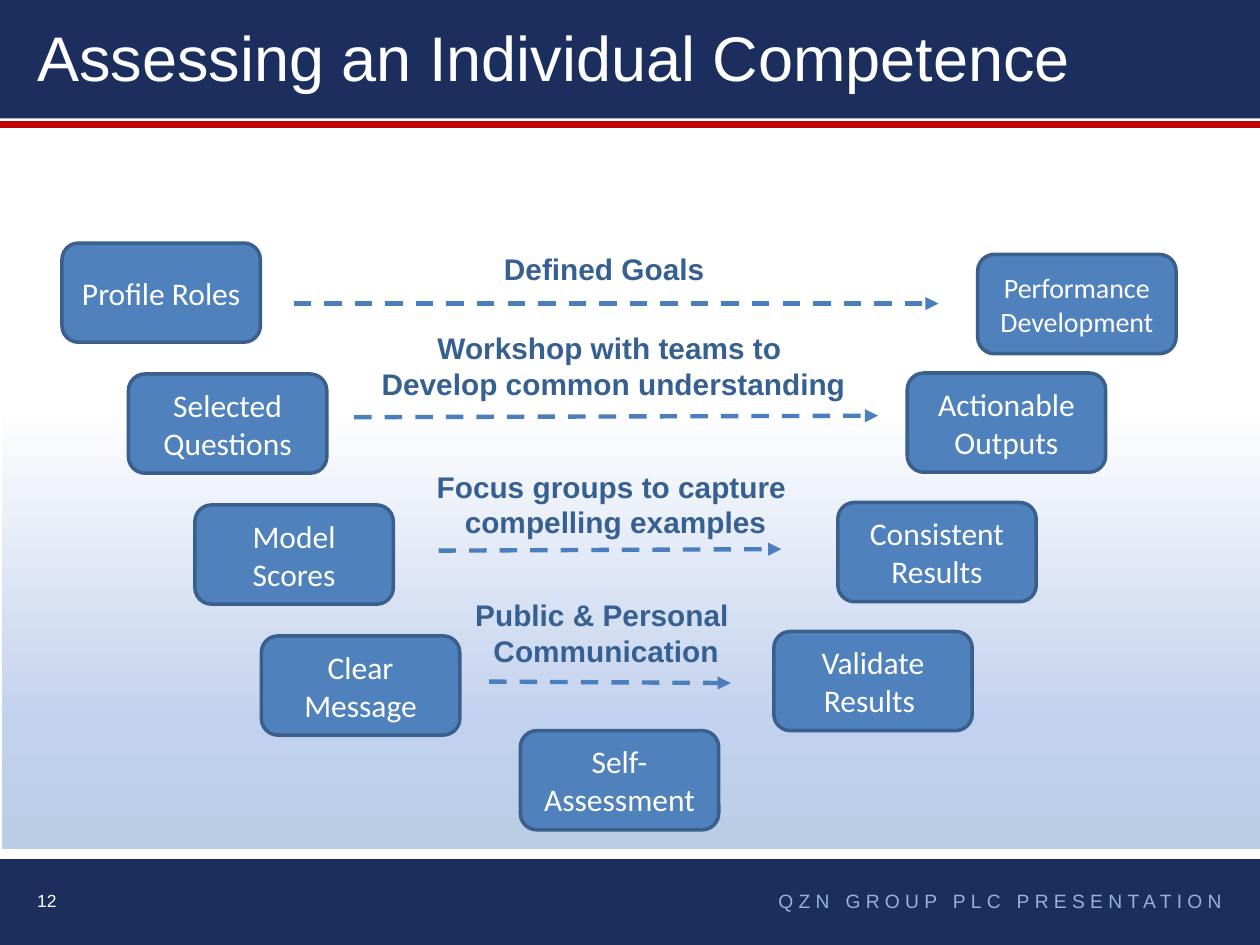
"""Build the slide on assessing an individual competence."""
from dataclasses import dataclass

from pptx import Presentation
from pptx.dml.color import RGBColor
from pptx.enum.dml import MSO_LINE_DASH_STYLE as Dash
from pptx.enum.shapes import MSO_CONNECTOR as Link, MSO_SHAPE as Kind
from pptx.enum.text import MSO_ANCHOR as Anchor, MSO_AUTO_SIZE as Fit, PP_ALIGN as Align
from pptx.oxml import parse_xml
from pptx.oxml.ns import nsdecls
from pptx.util import Cm, Pt

NAVY = RGBColor(0x1B, 0x2E, 0x5D)
RED = RGBColor(0xC0, 0x00, 0x00)
WHITE = RGBColor(0xFF, 0xFF, 0xFF)
BLUE = RGBColor(0x4F, 0x81, 0xBD)
EDGE = RGBColor(0x3A, 0x5F, 0x8C)
DASHED = RGBColor(0x4B, 0x7E, 0xBC)
INK = RGBColor(0x37, 0x60, 0x92)
PALE = RGBColor(0x95, 0xB3, 0xD7)
STOPS = ((0, RGBColor(0xB9, 0xCD, 0xE5)), (18, RGBColor(0xC2, 0xD1, 0xED)), (63, WHITE))

NODE = {"name": "Calibri", "size": Pt(18)}
HEAD = {"name": "Arial", "size": Pt(36)}
NOTE = {"name": "Arial", "size": Pt(17), "bold": True}
PAGE = {"name": "Arial", "size": Pt(10)}
FOOT = {"name": "Arial", "size": Pt(11)}


@dataclass
class Node:
    text: str
    x: float
    y: float
    size: int = 18


@dataclass
class Step:
    text: str
    box: tuple
    start: tuple
    end: tuple
    align: Align = Align.CENTER
    wrap: bool = False


LEFT = ("Profile Roles", "Selected Questions", "Model Scores", "Clear Message")
NODES = [Node(text, 1.25 + 1.34 * i, 4.9 + 2.64 * i) for i, text in enumerate(LEFT)] + [
    Node("Performance Development", 19.71, 5.13, 16),
    Node("Actionable Outputs", 18.29, 7.52),
    Node("Consistent Results", 16.89, 10.13),
    Node("Validate\nResults ", 15.6, 12.73),
    Node("Self-Assessment", 10.49, 14.73),
]
STEPS = [
    Step("Defined Goals", (9.91, 4.93, 4.75, 0.99), (5.92, 6.12), (18.92, 6.12), Align.LEFT),
    Step("Workshop with teams to \nDevelop common understanding",
         (6.91, 6.53, 10.92, 1.7), (7.14, 8.41), (17.7, 8.38), wrap=True),
    Step("Focus groups to capture \ncompelling examples",
         (8.51, 9.32, 7.8, 1.7), (8.84, 11.1), (15.75, 11.07)),
    Step("Public & Personal \nCommunication",
         (9.3, 11.91, 5.84, 1.7), (9.86, 13.74), (14.73, 13.77)),
]


def write(shape, text: str, style: dict, color: RGBColor, align: Align = Align.LEFT, **form) -> None:
    """Fill a shape with styled text."""
    frame = shape.text_frame
    frame.text = text
    for key, value in ({"word_wrap": True, "vertical_anchor": Anchor.MIDDLE} | form).items():
        setattr(frame, key, value)
    for para in frame.paragraphs:
        para.alignment = align
        for run in para.runs:
            for key, value in style.items():
                setattr(run.font, key, value)
            run.font.color.rgb = color


def block(slide, kind: Kind, box: tuple, color: RGBColor):
    """Add a plain filled shape."""
    shape = slide.shapes.add_shape(kind, *map(Cm, box))
    shape.shadow.inherit = False
    shape.fill.solid()
    shape.fill.fore_color.rgb = color
    shape.line.fill.background()
    return shape


def rule(slide, start: tuple, end: tuple, color: RGBColor, width: float):
    """Add a straight line without shadow."""
    line = slide.shapes.add_connector(Link.STRAIGHT, *map(Cm, start + end))
    line.line.color.rgb = color
    line.line.width = Pt(width)
    line._element.spPr.append(parse_xml(f"<a:effectLst {nsdecls('a')}/>"))
    return line


def shade(shape) -> None:
    """Swap the solid fill for the pale gradient."""
    stops = "".join(f'<a:gs pos="{pos * 1000}"><a:srgbClr val="{color}"/></a:gs>'
                    for pos, color in STOPS)
    grad = parse_xml(f'<a:gradFill {nsdecls("a")} rotWithShape="1"><a:gsLst>{stops}</a:gsLst>'
                     '<a:lin ang="5400000" scaled="0"/></a:gradFill>')
    props = shape._element.spPr
    props.replace(props.find(".//{*}solidFill"), grad)
    shape.rotation = 180


def draw_node(slide, node: Node) -> None:
    """Add one rounded box."""
    shape = block(slide, Kind.ROUNDED_RECTANGLE, (node.x, node.y, 4, 2), BLUE)
    shape.line.color.rgb = EDGE
    shape.line.width = Pt(2)
    write(shape, node.text, NODE | {"size": Pt(node.size)}, WHITE, Align.CENTER)


def draw_step(slide, step: Step) -> None:
    """Add one dashed arrow and its caption."""
    line = rule(slide, step.start, step.end, DASHED, 2.5).line
    line.dash_style = Dash.DASH
    line._get_or_add_ln().append(parse_xml(f'<a:tailEnd {nsdecls("a")} type="triangle"/>'))
    box = slide.shapes.add_textbox(*map(Cm, step.box))
    write(box, step.text, NOTE, INK, step.align, word_wrap=step.wrap,
          vertical_anchor=Anchor.TOP, auto_size=Fit.SHAPE_TO_FIT_TEXT)


def main() -> None:
    """Build and save the slide."""
    deck = Presentation()
    deck.slide_width, deck.slide_height = Cm(25.4), Cm(19.05)
    slide = deck.slides.add_slide(deck.slide_layouts[5])
    shapes = slide.shapes
    for top, high in ((17.32, 1.8), (0, 2.39)):
        block(slide, Kind.RECTANGLE, (0, top, 25.45, high), NAVY)
    rule(slide, (0, 2.51), (25.4, 2.51), RED, 4.5)
    shade(block(slide, Kind.RECTANGLE, (0.03, 2.92, 25.4, 14.2), WHITE))

    title = shapes.title
    spot = {"left": 0.5, "top": 0.13, "width": 22.8, "height": 2}
    for key, value in spot.items():
        setattr(title, key, Cm(value))
    write(title, "Assessing an Individual Competence", HEAD, WHITE, auto_size=Fit.NONE)
    shapes._spTree.append(title._element)

    page = shapes.add_textbox(*map(Cm, (0.5, 17.65, 3.89, 1.02)))
    write(page, "12", PAGE, WHITE)
    foot = shapes.add_textbox(*map(Cm, (6.91, 17.65, 17.98, 1.02)))
    write(foot, "QZN GROUP PLC PRESENTATION", FOOT, PALE, Align.RIGHT)
    foot.text_frame.paragraphs[0].runs[0].font._element.set("spc", "300")

    for node in NODES:
        draw_node(slide, node)
    for step in STEPS:
        draw_step(slide, step)
    deck.save("out.pptx")


if __name__ == "__main__":
    main()
